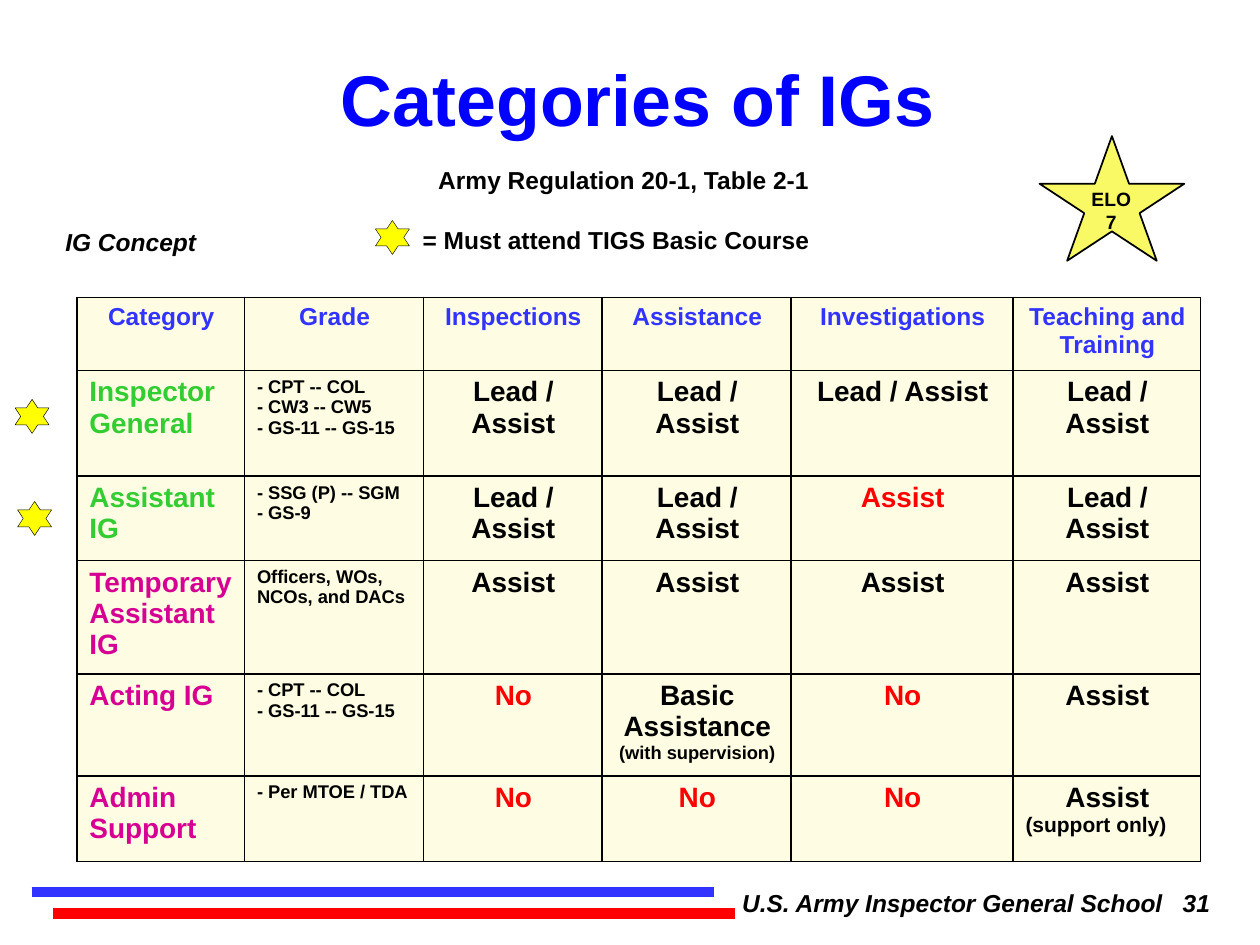
from dataclasses import dataclass

from lxml.etree import SubElement
from pptx import Presentation
from pptx.dml.color import RGBColor
from pptx.enum.shapes import MSO_CONNECTOR as Connector, MSO_SHAPE as Shape
from pptx.enum.text import MSO_ANCHOR as Anchor, PP_ALIGN as Align
from pptx.oxml.ns import qn
from pptx.util import Inches, Pt


@dataclass(frozen=True)
class Theme:
    """Colours, type sizes and font of the slide."""
    font: str = "Arial"
    black: str = "000000"
    title: str = "0000FF"
    blue: str = "3333FF"
    red: str = "FF0000"
    green: str = "33CC33"
    pink: str = "D60093"
    cream: str = "FEFDE3"
    marker: str = "FFFF00"
    badge: str = "F9F965"
    title_size: float = 41
    duty_size: float = 16
    body_size: float = 14
    note_size: float = 12
    badge_size: float = 11
    small_size: float = 10.5


@dataclass(frozen=True)
class Box:
    """A rectangle in grid units, 100 columns by 75 rows to the slide."""
    left: float
    top: float
    width: float
    height: float

    def inner(self, left, top, width, height):
        """Return a box placed relative to this one."""
        return Box(self.left + left, self.top + top, width, height)

    def lengths(self):
        """Return left, top, width and height as slide lengths."""
        return [units(value) for value in (self.left, self.top, self.width, self.height)]


THEME = Theme()
PAGE = Box(0, 0, 100, 75)
MARKER = 2.7
COLUMNS = (13.3, 14.2, 14.2, 15, 17.6, 14.9)
ROWS = (5.8, 8.4, 6.7, 8.4, 7.7, 6.8)
HEADINGS = ("Category", "Grade", "Inspections", "Assistance", "Investigations",
            "Teaching and Training")
LEAD, ASSIST, NO = "Lead / Assist", "Assist", "No"
BASIC, SUPERVISED, SUPPORT = "Basic Assistance ", "(with supervision)", "(support only)"
CATEGORIES = (
    ("Inspector General", THEME.green, ("- CPT -- COL", "- CW3 -- CW5", "- GS-11 -- GS-15"),
     (LEAD, LEAD, LEAD, LEAD)),
    ("Assistant IG", THEME.green, ("- SSG (P) -- SGM", "- GS-9"),
     (LEAD, LEAD, ASSIST, LEAD)),
    ("Temporary Assistant IG", THEME.pink, ("Officers, WOs, NCOs, and DACs",),
     (ASSIST, ASSIST, ASSIST, ASSIST)),
    ("Acting IG", THEME.pink, ("- CPT -- COL", "- GS-11 -- GS-15"),
     (NO, BASIC, NO, ASSIST)),
    ("Admin Support", THEME.pink, ("- Per MTOE / TDA",),
     (NO, NO, NO, ASSIST)),
)


def units(value):
    """Turn grid units into a slide length."""
    return Inches(value / 10)


def colour(code):
    """Turn a hexadecimal code into a colour."""
    return RGBColor.from_string(code)


def write(para, text, size=THEME.body_size, shade=THEME.black, italic=False, align=None):
    """Add a bold span of text to a paragraph."""
    if align is not None:
        para.alignment = align
    span = para.add_run()
    span.text = text
    span.font.name, span.font.size = THEME.font, Pt(size)
    span.font.bold, span.font.italic = True, italic
    span.font.color.rgb = colour(shade)


def write_lines(frame, lines, **style):
    """Write each line as a paragraph of its own."""
    for index, line in enumerate(lines):
        para = frame.add_paragraph() if index else frame.paragraphs[0]
        write(para, line, **style)


def add_label(shapes, box, lines, **style):
    """Add a text box."""
    frame = shapes.add_textbox(*box.lengths()).text_frame
    frame.word_wrap = True
    write_lines(frame, lines, **style)


def add_star(shapes, box, kind, fill, weight):
    """Add an outlined star."""
    star = shapes.add_shape(kind, *box.lengths())
    star.shadow.inherit = False
    star.fill.solid()
    star.fill.fore_color.rgb = colour(fill)
    star.line.color.rgb = colour(THEME.black)
    star.line.width = Pt(weight)


def add_marker(shapes, box, left, top):
    """Add the small star that means the basic course is required."""
    add_star(shapes, box.inner(left, top, MARKER, MARKER), Shape.STAR_6_POINT, THEME.marker, 0.25)


def add_rule(shapes, box, shade):
    """Add a thick level rule along the top of a box."""
    left, top, width, _ = box.lengths()
    rule = shapes.add_connector(Connector.STRAIGHT, left, top, left + width, top)
    rule.line.color.rgb = colour(shade)
    rule.line.width = Pt(6)
    SubElement(rule._element.spPr, qn("a:effectLst"))


def add_header(page, box):
    """Place the title, its source, the topic and the key."""
    title = page.shapes.title
    title.left, title.top, title.width, title.height = box.inner(11.9, 3.6, 77.5, 8.3).lengths()
    title.text_frame.vertical_anchor = Anchor.MIDDLE
    write(title.text_frame.paragraphs[0], "Categories of IGs", size=THEME.title_size,
          shade=THEME.title, align=Align.CENTER)
    add_label(page.shapes, box.inner(32.5, 12.6, 34, 3.3),
              ["Army Regulation 20-1, Table 2-1"], align=Align.CENTER)
    add_label(page.shapes, box.inner(4.2, 17.5, 24, 5), ["IG Concept"], italic=True)
    add_marker(page.shapes, box, 29.8, 17.5)
    add_label(page.shapes, box.inner(31.9, 17.4, 34, 3.4),
              ["= Must attend TIGS Basic Course"], align=Align.CENTER)


def add_badge(page, box):
    """Place the objective star with its number."""
    shapes = page.shapes.add_group_shape().shapes
    add_star(shapes, box, Shape.STAR_5_POINT, THEME.badge, 1)
    add_label(shapes, box.inner(0.9, 3.6, 9.6, 4.7), ["ELO", "7"],
              size=THEME.badge_size, align=Align.CENTER)


def style_cell(cell):
    """Give a cell its fill, margins and black borders."""
    cell.margin_left, cell.margin_right = units(1), units(0.9)
    properties = cell._tc.get_or_add_tcPr()
    for side in ("a:lnL", "a:lnR", "a:lnT", "a:lnB"):
        border = SubElement(properties, qn(side), w=str(Pt(1)))
        SubElement(SubElement(border, qn("a:solidFill")), qn("a:srgbClr"), val=THEME.black)
    cell.fill.solid()
    cell.fill.fore_color.rgb = colour(THEME.cream)


def is_limited(name, column, duty):
    """Tell whether a duty stands in red as a limit."""
    return duty == NO or (name, HEADINGS[column]) == ("Assistant IG", "Investigations")


def add_categories(page, box):
    """Place the table of categories and the markers beside it."""
    table = page.shapes.add_table(len(ROWS), len(COLUMNS), *box.lengths()).table
    for column, width in zip(table.columns, COLUMNS):
        column.width = units(width)
    for row, height in zip(table.rows, ROWS):
        row.height = units(height)
    for cell in table.iter_cells():
        style_cell(cell)
    for column, heading in enumerate(HEADINGS):
        write_lines(table.cell(0, column).text_frame, [heading], shade=THEME.blue,
                    align=Align.CENTER)
    for row, (name, shade, grades, duties) in enumerate(CATEGORIES, 1):
        write_lines(table.cell(row, 0).text_frame, [name], size=THEME.duty_size, shade=shade)
        write_lines(table.cell(row, 1).text_frame, grades, size=THEME.small_size)
        for column, duty in enumerate(duties, 2):
            frame = table.cell(row, column).text_frame
            ink = THEME.red if is_limited(name, column, duty) else THEME.black
            write_lines(frame, [duty], size=THEME.duty_size, shade=ink, align=Align.CENTER)
            if duty == BASIC:
                write(frame.paragraphs[0], SUPERVISED, size=THEME.small_size)
    support = table.cell(len(ROWS) - 1, len(COLUMNS) - 1).text_frame.add_paragraph()
    write(support, SUPPORT, size=THEME.note_size)
    add_marker(page.shapes, box, -4.9, 8.1)
    add_marker(page.shapes, box, -4.7, 16.2)


def add_footer(page, box):
    """Place the two rules and the school's name with the page number."""
    add_rule(page.shapes, box.inner(2.5, 0.8, 54.2, 0), THEME.blue)
    add_rule(page.shapes, box.inner(4.2, 2.5, 54.1, 0), THEME.red)
    add_label(page.shapes, box.inner(55, 0, 45, 5),
              ["U.S. Army Inspector General School   31"], italic=True, align=Align.CENTER)


def main():
    """Build the slide and save it."""
    deck = Presentation()
    deck.slide_width, deck.slide_height = units(PAGE.width), units(PAGE.height)
    page = deck.slides.add_slide(deck.slide_layouts[5])
    add_footer(page, PAGE.inner(0, 70, 100, 5))
    add_header(page, PAGE)
    add_categories(page, PAGE.inner(6.1, 23.6, sum(COLUMNS), sum(ROWS)))
    add_badge(page, PAGE.inner(82.5, 10.8, 11.5, 9.9))
    deck.save("out.pptx")


if __name__ == "__main__":
    main()
